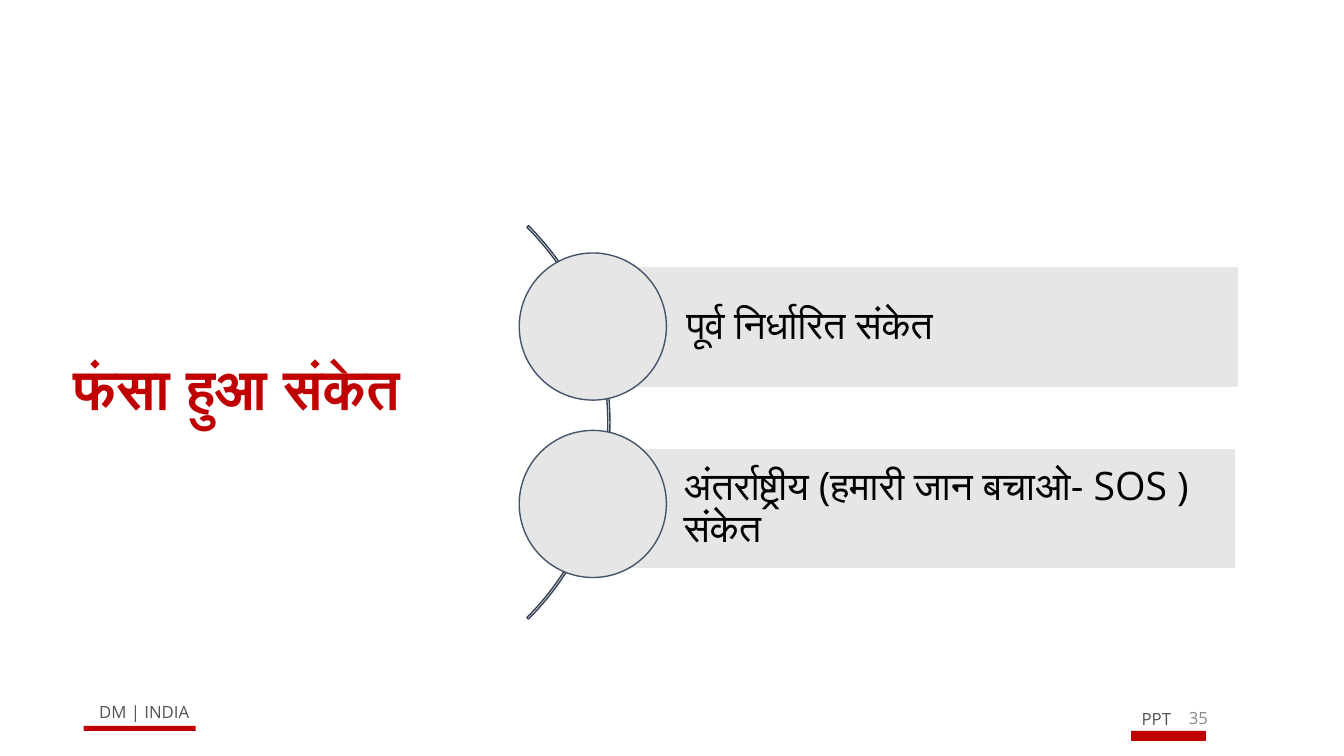
import pptx
import pptx.util
import pptx.dml.color
import pptx.enum.shapes
import pptx.enum.text

Inches = pptx.util.Inches
Pt = pptx.util.Pt
KIND = pptx.enum.shapes.MSO_SHAPE
ALIGN = pptx.enum.text.PP_ALIGN
ANCHOR = pptx.enum.text.MSO_ANCHOR
FONT = "Open Sans"
RED, GREY = "C00000", "E7E6E6"


def paint(item, color):
    item.rgb = pptx.dml.color.RGBColor.from_string(color)


def add_form(slide, kind, box, fill=None, line=None):
    form = slide.shapes.add_shape(kind, *map(Inches, box))
    form.shadow.inherit = False
    if fill:
        form.fill.solid()
        paint(form.fill.fore_color, fill)
    else:
        form.fill.background()
    if line:
        paint(form.line.color, line)
        form.line.width = Pt(1)
    else:
        form.line.fill.background()
    return form


def write(shape, text, size, color, align, anchor, pads, space=None, bold=False):
    frame = shape.text_frame
    frame.word_wrap = True
    frame.auto_size = pptx.enum.text.MSO_AUTO_SIZE.NONE
    frame.vertical_anchor = anchor
    (frame.margin_left, frame.margin_top,
     frame.margin_right, frame.margin_bottom) = map(Inches, pads)
    frame.text = text
    para = frame.paragraphs[0]
    para.alignment = align
    para.line_spacing = space
    para.font.name = FONT
    para.font.size = Pt(size)
    para.font.bold = bold
    paint(para.font.color, color)


def add_label(slide, box, text, color, align, anchor, pads):
    label = slide.shapes.add_textbox(*map(Inches, box))
    write(label, text, 12, color, align, anchor, pads)


def add_title(slide, box, text):
    title = slide.shapes.title
    title.left, title.top, title.width, title.height = map(Inches, box)
    title.fill.solid()
    paint(title.fill.fore_color, "FFFFFF")
    write(title, text, 40, RED, ALIGN.CENTER, ANCHOR.MIDDLE,
          (0.07, 0.04, 0.07, 0.04), 0.9, True)


def add_signal(slide, left, top, shift, text):
    ball = 1.46
    bar = add_form(slide, KIND.RECTANGLE,
                   (left + shift[0], top + shift[1], 6.39, 1.17), GREY, GREY)
    write(bar, text, 28, "000000", ALIGN.LEFT, ANCHOR.MIDDLE,
          (0.93, 0.08, 0.08, 0.08), 0.9)
    add_form(slide, KIND.OVAL, (left, top, ball, ball), GREY, "44546A")


def add_signals(slide, left, top):
    arc = add_form(slide, KIND.BLOCK_ARC, (left, top, 5.52, 5.52), line="354254")
    for i, value in enumerate((189, 27, 0.004)):
        arc.adjustments[i] = value
    rows = (
        ("पूर्व निर्धारित संकेत", (0.73, 0.15)),
        ("अंतर्राष्ट्रीय (हमारी जान बचाओ- SOS ) संकेत", (0.7, 0.19)),
    )
    for i, (text, shift) in enumerate(rows):
        add_signal(slide, left + 4.62, top + 1.08 + i * 1.76, shift, text)


def add_footer(slide, top):
    pads = (0.09,) * 4
    add_label(slide, (0.24, top, 2.38, 0.37), "DM | INDIA", "535353",
              ALIGN.CENTER, ANCHOR.TOP, pads)
    add_form(slide, KIND.RECTANGLE, (0.83, top + 0.33, 1.11, 0.05), RED)
    add_label(slide, (11.17, top + 0.07, 0.6, 0.37), "PPT", "535353",
              ALIGN.CENTER, ANCHOR.TOP, pads)
    add_form(slide, KIND.RECTANGLE, (11.22, top + 0.38, 0.74, 0.1), RED)
    add_label(slide, (11.58, top + 0.05, 0.5, 0.4), "35", "888888",
              ALIGN.RIGHT, ANCHOR.MIDDLE, (0.1, 0.05, 0.1, 0.05))


def main():
    deck = pptx.Presentation()
    deck.slide_width, deck.slide_height = Inches(13.33), Inches(7.5)
    slide = deck.slides.add_slide(deck.slide_layouts[5])
    add_footer(slide, 6.87)
    add_signals(slide, 0.53, 1.43)
    add_title(slide, (0, 3.34, 4.7, 1.09), "फंसा हुआ संकेत")
    deck.save("out.pptx")


if __name__ == "__main__":
    main()
